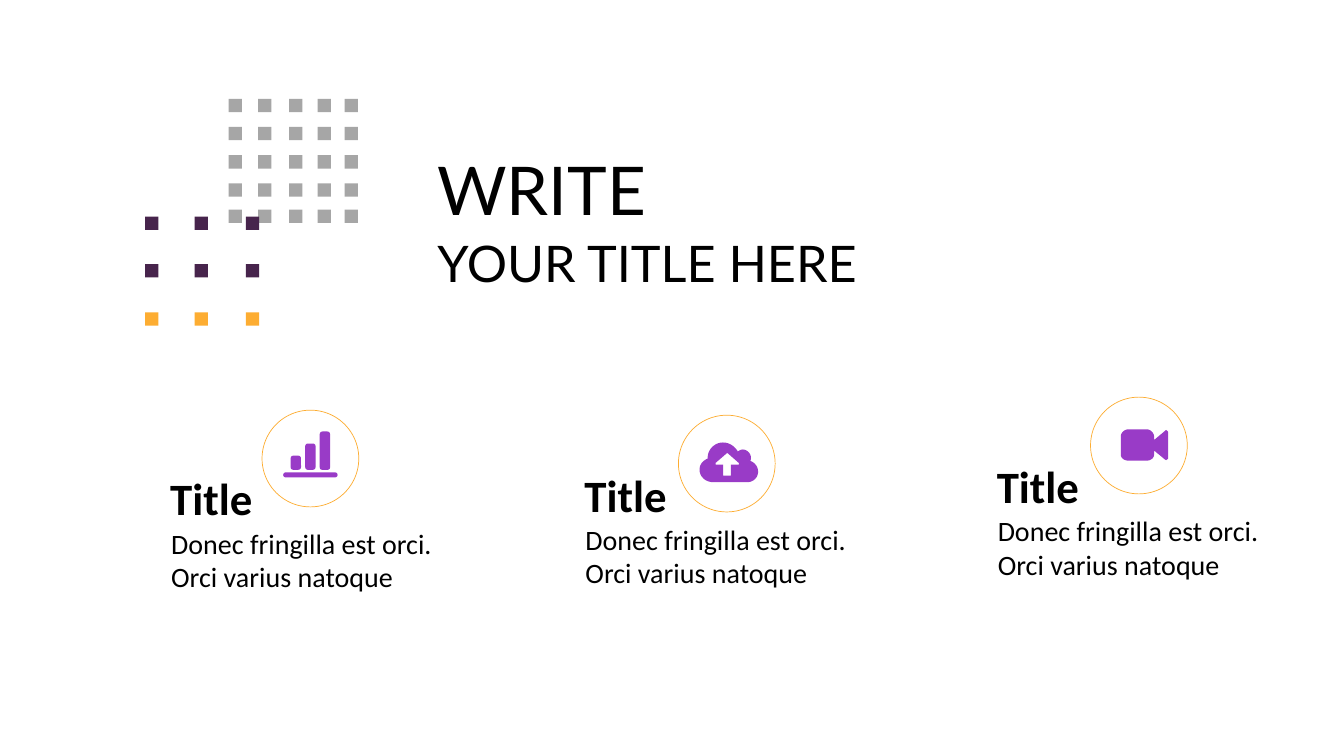
from dataclasses import dataclass
from itertools import product

from pptx import Presentation
from pptx.dml.color import RGBColor
from pptx.enum.shapes import MSO_SHAPE as SHAPE
from pptx.enum.text import MSO_AUTO_SIZE as AUTO_SIZE
from pptx.shapes.autoshape import Shape
from pptx.util import Pt

GREY, PLUM, ORANGE, PURPLE, BLACK = "A6A6A6", "47244C", "FDAD32", "993BC7", "000000"
DOT = 9.5
CIRCLE = 69.1
CURVE_STEPS = 10

Point = tuple[float, float]


@dataclass
class DotGrid:
    lefts: list[float]
    tops: list[float]
    row_colors: list[str]


@dataclass
class Card:
    left: float
    top: float
    circle: Point


@dataclass
class Contour:
    """Closed outline; a step is a line end (x, y) or six Bezier numbers."""
    start: Point
    steps: list[tuple[float, ...]]


GRIDS = [
    DotGrid([163.4, 184.3, 206.6, 226.8, 246.2],
            [70.6, 90.7, 110.9, 131, 149.8], [GREY] * 5),
    DotGrid([103.7, 139, 175.7], [154.8, 188.6, 223.2], [PLUM, PLUM, ORANGE]),
]

CARDS = [
    Card(115.2, 372.2, (187.2, 293)),
    Card(411.1, 369.4, (484.6, 296.6)),
    Card(705.6, 363.6, (779, 283.7)),
]

CLOUD = [
    Contour((33.8, 28.4), [
        (10.1, 28.4), (4.3, 28.4, 0, 24.5, 0, 19.4),
        (0, 15.8, 2.2, 13, 5.8, 11.5), (5.8, 10.8),
        (5.8, 5, 10.8, 0, 16.6, 0), (21.6, 0, 25.2, 2.9, 27.4, 6.5),
        (28.1, 5.8, 29.5, 5, 31, 5), (33.8, 5, 36.7, 7.9, 36.7, 10.8),
        (36.7, 11.5, 36.7, 13, 36, 13), (39.6, 14.4, 41.8, 17.3, 41.8, 20.9),
        (41.8, 25.2, 38.2, 28.4, 33.8, 28.4)]),
    Contour((19.8, 7.4), [
        (28, 14.6), (28, 15.8), (22.3, 15.8), (22.3, 23.6), (16.9, 23.6),
        (16.9, 15.8), (11.4, 15.8), (11.4, 14.6)]),
]

CAMERA = [
    Contour((33.8, 20.9), [
        (33.8, 20.9, 33.1, 21.6, 32.4, 22), (31.7, 21.6), (23.8, 15.1),
        (23.8, 18), (23.8, 20.2, 21.6, 22.3, 18.7, 22.3), (5.4, 22.3),
        (2.2, 22.3, 0, 20.2, 0, 18), (0, 5),
        (0, 2.9, 2.2, 0, 5.4, 0), (18.7, 0),
        (21.6, 0, 23.8, 2.9, 23.8, 5), (23.8, 7.6), (31.7, 1),
        (32.4, 0.4), (33.1, 1, 33.8, 1.4, 33.8, 2.2)]),
]


def rgb(color: str) -> RGBColor:
    return RGBColor.from_string(color)


def paint(sp: Shape, fill: str | None, line: str | None = None) -> None:
    sp.shadow.inherit = False
    if fill:
        sp.fill.solid()
        sp.fill.fore_color.rgb = rgb(fill)
    else:
        sp.fill.background()
    if line:
        sp.line.color.rgb = rgb(line)
        sp.line.width = Pt(0.5)
    else:
        sp.line.fill.background()


def add_preset(shapes, kind: SHAPE, left: float, top: float,
               width: float, height: float) -> Shape:
    return shapes.add_shape(kind, Pt(left), Pt(top), Pt(width), Pt(height))


def add_label(shapes, text: str, left: float, top: float, width: float,
              height: float, size: float, font: str, bold: bool = False) -> None:
    sp = shapes.add_textbox(Pt(left), Pt(top), Pt(width), Pt(height))
    tf = sp.text_frame
    tf.word_wrap = True
    tf.auto_size = AUTO_SIZE.SHAPE_TO_FIT_TEXT
    r = tf.paragraphs[0].add_run()
    r.text = text
    r.font.name = font
    r.font.size = Pt(size)
    r.font.bold = bold
    r.font.color.rgb = rgb(BLACK)


def outline(contour: Contour) -> list[Point]:
    """Flatten the contour's curves into points after its start."""
    points = [contour.start]
    for step in contour.steps:
        if len(step) == 2:
            points.append(step)
            continue
        x0, y0 = points[-1]
        x1, y1, x2, y2, x3, y3 = step
        for i in range(1, CURVE_STEPS + 1):
            t = i / CURVE_STEPS
            a, b, c, d = (1 - t)**3, 3 * t * (1 - t)**2, 3 * t**2 * (1 - t), t**3
            points.append((a * x0 + b * x1 + c * x2 + d * x3,
                           a * y0 + b * y1 + c * y2 + d * y3))
    return points[1:]


def add_icon(shapes, contours: list[Contour], left: float, top: float) -> None:
    first = contours[0]
    builder = shapes.build_freeform(Pt(first.start[0]), Pt(first.start[1]))
    for contour in contours:
        if contour is not first:
            builder.move_to(Pt(contour.start[0]), Pt(contour.start[1]))
        builder.add_line_segments([(Pt(x), Pt(y)) for x, y in outline(contour)])
    paint(builder.convert_to_shape(Pt(left), Pt(top)), PURPLE)


def add_bar_icon(shapes, left: float, top: float) -> None:
    group = shapes.add_group_shape().shapes
    base = add_preset(group, SHAPE.ROUNDED_RECTANGLE, left, top + 29.2, 38.9, 3.6)
    base.adjustments[0] = 0.5
    paint(base, PURPLE)
    for i, bar_top in enumerate([17.3, 8.6, 0]):
        bar = add_preset(group, SHAPE.ROUNDED_RECTANGLE, left + 5.3 + 10.4 * i,
                         top + bar_top, 7.4, 27.4 - bar_top)
        bar.adjustments[0] = 0.25
        paint(bar, PURPLE)


def add_dots(shapes, grid: DotGrid) -> None:
    group = shapes.add_group_shape().shapes
    for (top, color), left in product(zip(grid.tops, grid.row_colors), grid.lefts):
        paint(add_preset(group, SHAPE.RECTANGLE, left, top, DOT, DOT), color)


def add_card(shapes, card: Card) -> None:
    group = shapes.add_group_shape().shapes
    add_label(group, "Donec fringilla est orci. Orci varius natoque",
              card.left, card.top, 223.9, 55.4, 20, "Calibri")
    add_label(group, "Title", card.left - 0.7, card.top - 39.2,
              108.7, 46.1, 32, "Calibri", bold=True)
    circle = add_preset(shapes, SHAPE.OVAL, *card.circle, CIRCLE, CIRCLE)
    paint(circle, None, ORANGE)


def main() -> None:
    prs = Presentation()
    prs.slide_width, prs.slide_height = Pt(960), Pt(540)
    shapes = prs.slides.add_slide(prs.slide_layouts[6]).shapes
    for grid in GRIDS:
        add_dots(shapes, grid)
    add_label(shapes, "WRITE", 305.3, 102.2, 380.2, 65.5, 48, "Lato")
    add_label(shapes, "YOUR TITLE HERE", 305.3, 162, 614.2, 51.1, 36, "Lato")
    for card in CARDS:
        add_card(shapes, card)
    add_bar_icon(shapes, 202.3, 308.2)
    add_icon(shapes, CLOUD, 499.7, 316.1)
    add_icon(shapes, CAMERA, 800.6, 306.7)
    prs.save("out.pptx")


if __name__ == "__main__":
    main()
